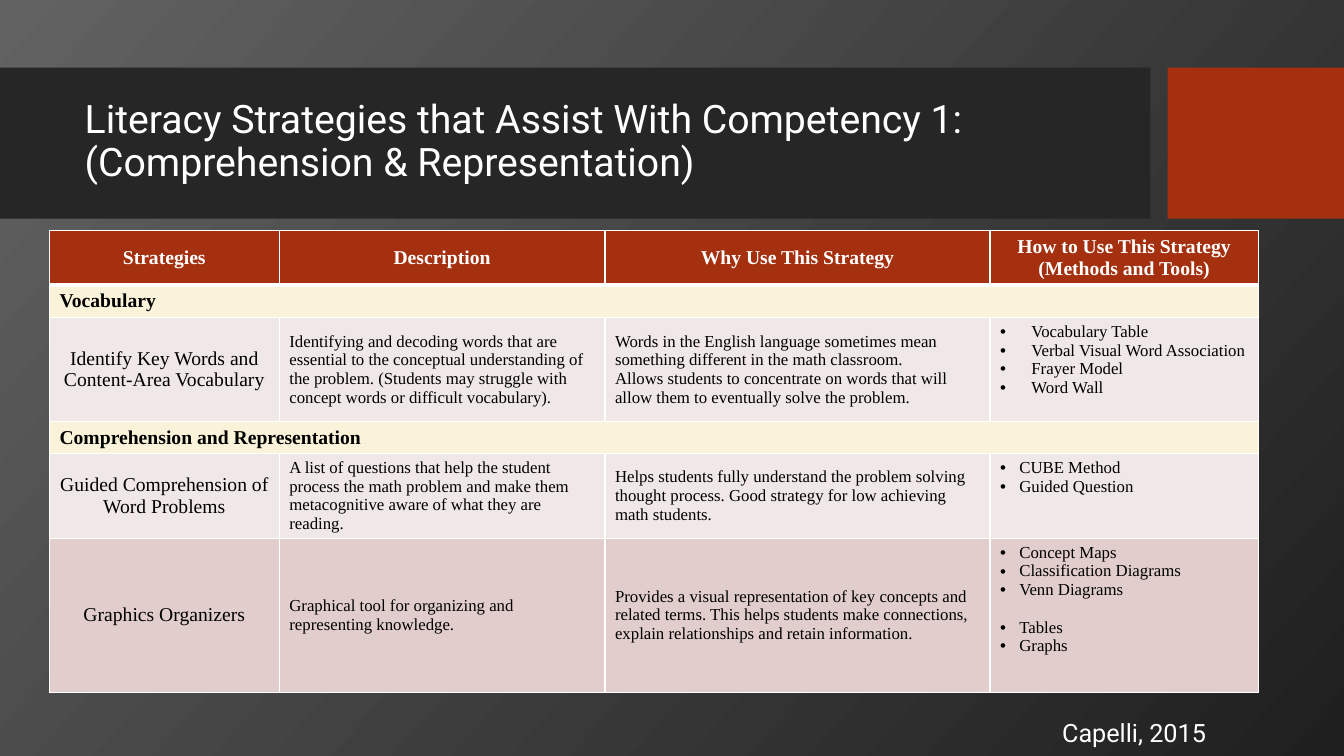
from lxml.etree import SubElement
from pptx import Presentation
from pptx.dml.color import RGBColor
from pptx.enum.shapes import MSO_SHAPE
from pptx.enum.text import MSO_ANCHOR, MSO_AUTO_SIZE, PP_ALIGN
from pptx.oxml.ns import qn
from pptx.util import Inches, Pt

WHITE = RGBColor(0xFF, 0xFF, 0xFF)
BLACK = RGBColor(0, 0, 0)
BAND = RGBColor(0x26, 0x26, 0x26)
RUST = RGBColor(0xA5, 0x30, 0x0F)
CREAM = RGBColor(0xFA, 0xF3, 0xD9)
PALE_ROSE = RGBColor(0xF0, 0xE8, 0xE7)
ROSE = RGBColor(0xE1, 0xCD, 0xCC)
GRADIENT = (RGBColor(0x62, 0x62, 0x62), RGBColor(0x1F, 0x1F, 0x1F))

SANS, SERIF = "Roboto", "Times New Roman"
HEADING = {"size": Pt(14), "bold": True, "name": SERIF}
HEADER_FONT = {**HEADING, "color": WHITE}
SECTION_FONT = {**HEADING, "color": BLACK}
STRATEGY_FONT = {**SECTION_FONT, "bold": False}
DETAIL_FONT = {**STRATEGY_FONT, "size": Pt(12)}

COLUMN_WIDTHS = (2.28, 3.23, 3.82, 2.66)
ROW_HEIGHTS = (0.54, 0.32, 1.03, 0.32, 0.75, 1.53)
HEADERS = ("Strategies", "Description", "Why Use This Strategy",
           "How to Use This Strategy\n(Methods and Tools)")
SECTIONS = {1: "Vocabulary", 3: "Comprehension and Representation"}
# row: (fill, bullet indent, strategy, description, reason, methods)
STRATEGIES = {
    2: (PALE_ROSE, 0.31, "Identify Key Words and Content-Area Vocabulary",
        "Identifying and decoding words that are essential to the conceptual understanding of "
        "the problem. (Students may struggle with concept words or difficult vocabulary).",
        "Words in the English language sometimes mean something different in the math classroom.\n"
        "Allows students to concentrate on words that will allow them to eventually solve the problem.",
        "Vocabulary Table\nVerbal Visual Word Association\nFrayer Model\nWord Wall"),
    4: (PALE_ROSE, 0.19, "Guided Comprehension of Word Problems",
        "A list of questions that help the student process the math problem and make them "
        "metacognitive aware of what they are reading.",
        "Helps students fully understand the problem solving thought process. "
        "Good strategy for low achieving math students.",
        "CUBE Method\nGuided Question"),
    5: (ROSE, 0.19, "Graphics Organizers",
        "Graphical tool for organizing and representing knowledge.",
        "Provides a visual representation of key concepts and related terms. This helps students "
        "make connections, explain relationships and retain information.",
        "Concept Maps\nClassification Diagrams\nVenn Diagrams\nTables\nGraphs"),
}


def format_text(frame, style, align=PP_ALIGN.LEFT):
    for paragraph in frame.paragraphs:
        paragraph.alignment = align
        for run in paragraph.runs:
            for key, value in style.items():
                if key == "color":
                    run.font.color.rgb = value
                else:
                    setattr(run.font, key, value)


def add_bullets(frame, indent):
    for paragraph in frame.paragraphs:
        properties = paragraph._p.get_or_add_pPr()
        properties.set("marL", str(Inches(indent)))
        properties.set("indent", str(-Inches(indent)))
        SubElement(properties, qn("a:buFont"), typeface="Arial")
        SubElement(properties, qn("a:buChar"), char="•")


def add_borders(cell, bottom=1):
    properties = cell._tc.get_or_add_tcPr()
    for side, width in {"L": 1, "R": 1, "T": 1, "B": bottom}.items():
        line = SubElement(properties, qn(f"a:ln{side}"), w=str(Pt(width)))
        fill = SubElement(line, qn("a:solidFill"))
        SubElement(fill, qn("a:srgbClr"), val=str(WHITE))


def fill_cell(cell, text, style, color, align=PP_ALIGN.LEFT, anchor=MSO_ANCHOR.MIDDLE):
    cell.text = text
    cell.vertical_anchor = anchor
    cell.fill.solid()
    cell.fill.fore_color.rgb = color
    format_text(cell.text_frame, style, align)


def paint_background(slide):
    fill = slide.background.fill
    fill.gradient()
    fill.gradient_angle = 318
    for stop, color in zip(fill.gradient_stops, GRADIENT):
        stop.color.rgb = color


def add_title_band(slide, left, top, width, height):
    # Dark band and rust block, with a gap between them
    band_width, block_width = 11.41, 1.75
    for x, w, color in ((left, band_width, BAND),
                        (left + width - block_width, block_width, RUST)):
        block = slide.shapes.add_shape(MSO_SHAPE.RECTANGLE, Inches(x), Inches(top),
                                       Inches(w), Inches(height))
        block.shadow.inherit = False
        block.fill.solid()
        block.fill.fore_color.rgb = color
        block.line.fill.background()

    # Title, brought in front of the band
    title = slide.shapes.title
    slide.shapes._spTree.append(title._element)
    title.left, title.top = Inches(left + 0.74), Inches(top + 0.15)
    title.width, title.height = Inches(10.51), Inches(1.18)
    frame = title.text_frame
    frame.text = "Literacy Strategies that Assist With Competency 1:\v(Comprehension & Representation)"
    frame.word_wrap = True
    frame.auto_size = MSO_AUTO_SIZE.NONE
    frame.vertical_anchor = MSO_ANCHOR.MIDDLE
    frame.paragraphs[0].line_spacing = 0.9
    format_text(frame, {"size": Pt(28), "name": SANS, "color": WHITE})


def add_strategy_table(slide, left, top, width, height):
    table = slide.shapes.add_table(len(ROW_HEIGHTS), len(COLUMN_WIDTHS), Inches(left),
                                   Inches(top), Inches(width), Inches(height)).table
    table.horz_banding = False
    for column, column_width in zip(table.columns, COLUMN_WIDTHS):
        column.width = Inches(column_width)
    for index, row_height in enumerate(ROW_HEIGHTS):
        table.rows[index].height = Inches(row_height)
        for cell in table.rows[index].cells:
            add_borders(cell, bottom=3 if index == 0 else 1)

    # Header row
    for column, header in enumerate(HEADERS):
        fill_cell(table.cell(0, column), header, HEADER_FONT, RUST, PP_ALIGN.CENTER)

    # Section rows across all columns
    for row, section in SECTIONS.items():
        table.cell(row, 0).merge(table.cell(row, len(COLUMN_WIDTHS) - 1))
        fill_cell(table.cell(row, 0), section, SECTION_FONT, CREAM)

    # Strategy rows
    for row, (color, indent, strategy, description, reason, methods) in STRATEGIES.items():
        fill_cell(table.cell(row, 0), strategy, STRATEGY_FONT, color, PP_ALIGN.CENTER)
        fill_cell(table.cell(row, 1), description, DETAIL_FONT, color)
        fill_cell(table.cell(row, 2), reason, DETAIL_FONT, color)
        methods_cell = table.cell(row, 3)
        fill_cell(methods_cell, methods, DETAIL_FONT, color, anchor=MSO_ANCHOR.TOP)
        add_bullets(methods_cell.text_frame, indent)

    # Gap that sets tables and graphs apart from the diagrams
    table.cell(5, 3).text_frame.paragraphs[3].space_before = Pt(13.5)


def add_citation(slide, left, top, width, height):
    frame = slide.shapes.add_textbox(Inches(left), Inches(top), Inches(width),
                                     Inches(height)).text_frame
    frame.word_wrap = True
    frame.auto_size = MSO_AUTO_SIZE.SHAPE_TO_FIT_TEXT
    frame.text = "Capelli, 2015"
    format_text(frame, {"size": Pt(18), "name": SANS, "color": WHITE}, PP_ALIGN.RIGHT)


def main():
    presentation = Presentation()
    presentation.slide_width, presentation.slide_height = Inches(13.33), Inches(7.5)
    slide = presentation.slides.add_slide(presentation.slide_layouts[5])
    paint_background(slide)
    add_title_band(slide, 0, 0.67, 13.33, 1.5)
    add_strategy_table(slide, 0.49, 2.29, sum(COLUMN_WIDTHS), sum(ROW_HEIGHTS))
    add_citation(slide, 8.72, 7.07, 3.34, 0.4)
    presentation.save("out.pptx")


if __name__ == "__main__":
    main()
